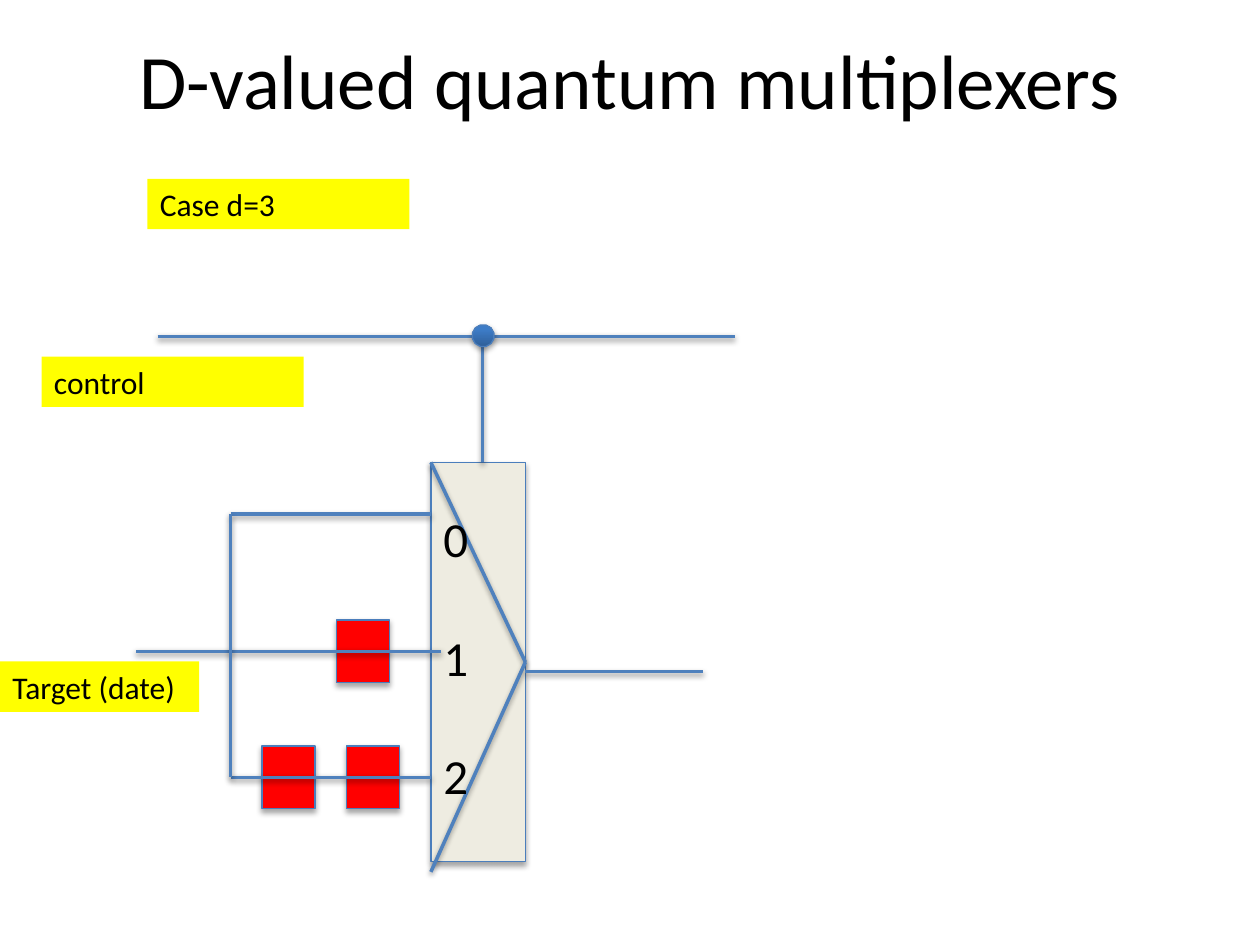
from lxml import etree
from pptx import Presentation
from pptx import util as u
from pptx.dml.color import RGBColor
from pptx.enum import shapes, text
from pptx.oxml import ns

BLACK = RGBColor(0x00, 0x00, 0x00)
YELLOW = RGBColor(0xFF, 0xFF, 0x00)
RED = RGBColor(0xFF, 0x00, 0x00)
CREAM = RGBColor(0xEE, 0xEC, 0xE1)
OUTLINE = RGBColor(0x4B, 0x7E, 0xBC)
WIRE = RGBColor(0x4F, 0x81, 0xBD)
DOT_DARK = RGBColor(0x2F, 0x5F, 0x99)
DOT_LIGHT = RGBColor(0x3D, 0x7C, 0xC7)

deck = Presentation()
deck.slide_width, deck.slide_height = u.Inches(10), u.Inches(7.5)
page = deck.slides.add_slide(deck.slide_layouts[6])


def finish(item, color, width, distance, alpha):
    """Set the outline and a soft shadow that falls straight down."""
    item.line.color.rgb = color
    item.line.width = u.Pt(width)
    effects = etree.SubElement(item._element.spPr, ns.qn("a:effectLst"))
    shadow = etree.SubElement(effects, ns.qn("a:outerShdw"), blurRad="40000",
                              dist=str(u.Pt(distance)), dir="5400000", rotWithShape="0")
    shade = etree.SubElement(shadow, ns.qn("a:srgbClr"), val="000000")
    etree.SubElement(shade, ns.qn("a:alpha"), val=str(alpha * 1000))


def add_text(lines, left, top, width, height, size, fill=None):
    box = page.shapes.add_textbox(*map(u.Inches, (left, top, width, height)))
    if fill is not None:
        box.fill.solid()
        box.fill.fore_color.rgb = fill
    frame = box.text_frame
    frame.word_wrap = True
    frame.text = "\n".join(lines)
    for para in frame.paragraphs:
        para.font.name = "Calibri"
        para.font.size = u.Pt(size)
        para.font.color.rgb = BLACK
    return frame


title = add_text(["D-valued quantum multiplexers"], 0.5, 0, 9, 1.25, 44)
title.vertical_anchor = text.MSO_ANCHOR.MIDDLE
title.paragraphs[0].alignment = text.PP_ALIGN.CENTER

# Multiplexer body, with the two diagonals meeting at its output side
body = page.shapes.add_shape(shapes.MSO_SHAPE.RECTANGLE, *map(u.Inches, (3.42, 3.67, 0.75, 3.17)))
body.fill.solid()
body.fill.fore_color.rgb = CREAM
finish(body, OUTLINE, 0.75, 1.8, 35)

for corner_y in (3.67, 6.92):
    diagonal = page.shapes.add_connector(
        shapes.MSO_CONNECTOR.STRAIGHT, *map(u.Inches, (3.42, corner_y, 4.17, 5.25)))
    diagonal.end_connect(body, 3)
    finish(diagonal, WIRE, 2, 1.6, 38)

inputs = add_text(["0", "1", "2"], 3.42, 3.99, 0.42, 2.46, 28)
for para in inputs.paragraphs[1:]:
    para.space_before = u.Pt(34)

# Gates on inputs 1 and 2
for left, top in [(2.67, 4.92), (2.08, 5.92), (2.75, 5.92)]:
    gate = page.shapes.add_shape(
        shapes.MSO_SHAPE.RECTANGLE, *map(u.Inches, (left, top, 0.42, 0.5)))
    gate.fill.solid()
    gate.fill.fore_color.rgb = RED
    finish(gate, OUTLINE, 0.75, 1.8, 35)

wires = [
    (4.17, 5.33, 5.58, 5.33),  # output
    (1.25, 2.67, 5.83, 2.67),  # control
    (3.83, 2.67, 3.83, 3.67),  # control to multiplexer
    (1.83, 6.17, 3.42, 6.17),  # input 2
    (1.08, 5.17, 3.5, 5.17),   # input 1, target
    (1.83, 4.08, 3.42, 4.08),  # input 0
    (1.83, 4.08, 1.83, 6.17),  # fan-out
]
for ends in wires:
    wire = page.shapes.add_connector(shapes.MSO_CONNECTOR.STRAIGHT, *map(u.Inches, ends))
    finish(wire, WIRE, 2, 1.6, 38)

dot = page.shapes.add_shape(shapes.MSO_SHAPE.DODECAGON, *map(u.Inches, (3.75, 2.58, 0.17, 0.17)))
dot.fill.gradient()
dot.fill.gradient_angle = 90
for stop, color, position in zip(dot.fill.gradient_stops, (DOT_DARK, DOT_LIGHT), (0, 0.8)):
    stop.color.rgb = color
    stop.position = position
finish(dot, OUTLINE, 0.75, 1.8, 35)

for label, left, top, width in [
    ("Case d=3", 1.17, 1.42, 2.08),
    ("Target (date)", 0, 5.25, 1.58),
    ("control", 0.33, 2.83, 2.08),
]:
    add_text([label], left, top, width, 0.4, 18, YELLOW)

deck.save("out.pptx")
